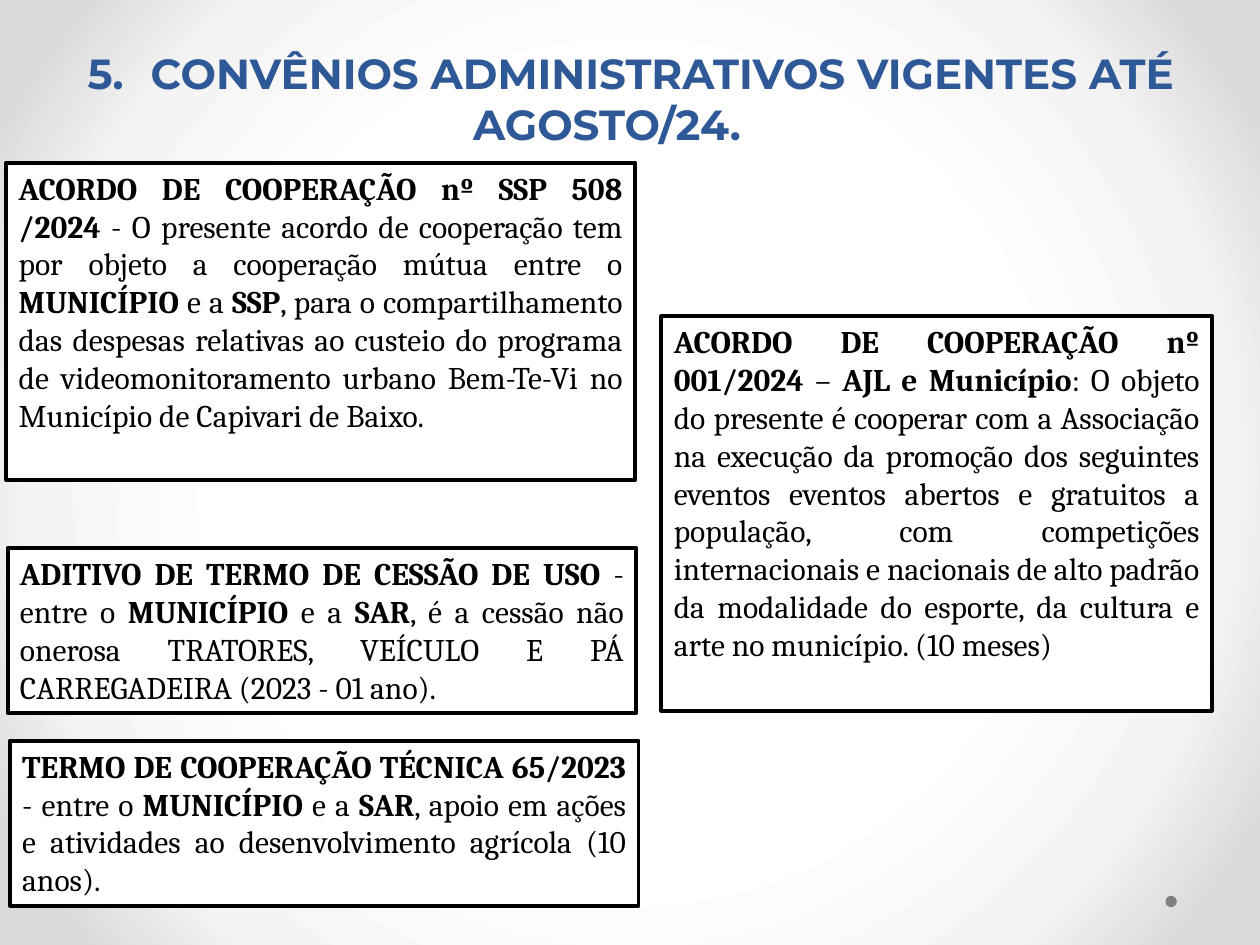
"""Build a slide listing the administrative agreements in force."""
from lxml.etree import SubElement as Sub
from pptx import Presentation
from pptx.dml.color import RGBColor
from pptx.enum.shapes import MSO_SHAPE as Kind
from pptx.enum.text import MSO_ANCHOR as Anchor, PP_ALIGN as Align
from pptx.oxml.ns import qn
from pptx.util import Pt

BLACK = RGBColor(0, 0, 0)
WHITE = RGBColor(255, 255, 255)
GRAY = RGBColor(0x80, 0x80, 0x80)
BLUE = RGBColor(0x2F, 0x58, 0x97)
STOPS = [(50, WHITE), (76, RGBColor(0xF4, 0xF4, 0xF4)), (92, RGBColor(0xDA, 0xDA, 0xDA))]

BOXES = [
    (3.6, 92.9, 359.3, 181.4, [
        "ACORDO DE COOPERAÇÃO nº SSP 508 /2024 ",
        "- O presente acordo de cooperação tem por objeto a cooperação mútua entre o ",
        "MUNICÍPIO", " e a ", "SSP",
        ", para o compartilhamento das despesas relativas ao custeio do programa de "
        "videomonitoramento urbano Bem-Te-Vi no Município de Capivari de Baixo."]),
    (378, 180.7, 314.6, 225.4, [
        "ACORDO DE COOPERAÇÃO nº 001/2024 ", "– ", "AJL e Município",
        ": O objeto do presente é cooperar com a Associação na execução da promoção dos "
        "seguintes eventos eventos abertos e gratuitos a população, com competições "
        "internacionais e nacionais de alto padrão da modalidade do esporte, da cultura "
        "e arte no município. (10 meses)"]),
    (4.3, 313.2, 359.3, 94.3, [
        "ADITIVO DE TERMO DE CESSÃO DE USO ", "- entre o ", "MUNICÍPIO", " e a ", "SAR",
        ", é a cessão não onerosa TRATORES, VEÍCULO E PÁ CARREGADEIRA (2023 - 01 ano)."]),
    (5.6, 423.2, 359.3, 94.3, [
        "TERMO DE COOPERAÇÃO TÉCNICA 65/2023 ", "- entre o ", "MUNICÍPIO", " e a ", "SAR",
        ", apoio em ações e atividades ao desenvolvimento agrícola (10 anos)."]),
]


def add_shape(kind, left, top, width, height, color):
    shape = slide.shapes.add_shape(kind, Pt(left), Pt(top), Pt(width), Pt(height))
    shape.shadow.inherit = False
    shape.fill.solid()
    shape.fill.fore_color.rgb = color
    return shape


deck = Presentation()
deck.slide_width, deck.slide_height = Pt(720), Pt(540)
slide = deck.slides.add_slide(deck.slide_layouts[6])

slide.background.fill.gradient()
grad = next(slide._element.iter(qn("a:gradFill")))
for child in list(grad):
    grad.remove(child)
stops = Sub(grad, qn("a:gsLst"))
for pos, color in STOPS:
    stop = Sub(stops, qn("a:gs"), pos=str(pos * 1000))
    Sub(stop, qn("a:srgbClr"), val=str(color))
route = Sub(grad, qn("a:path"), path="circle")
Sub(route, qn("a:fillToRect"), l="50000", t="50000", r="50000", b="50000")

dot = add_shape(Kind.OVAL, 666, 511.9, 6.5, 6.5, GRAY)
dot.line.fill.background()

title = slide.shapes.add_textbox(Pt(28.8), Pt(20.9), Pt(663.1), Pt(67.7))
frame = title.text_frame
frame.word_wrap = True
frame.vertical_anchor = Anchor.BOTTOM
para = frame.paragraphs[0]
para.text = "5.\tCONVÊNIOS ADMINISTRATIVOS VIGENTES ATÉ AGOSTO/24.\t"
para.alignment = Align.CENTER
para.font.name, para.font.size, para.font.bold = "Montserrat", Pt(24), True
para.font.color.rgb = BLUE

for left, top, width, height, parts in BOXES:
    box = add_shape(Kind.RECTANGLE, left, top, width, height, WHITE)
    box.line.color.rgb = BLACK
    box.line.width = Pt(2.25)
    frame = box.text_frame
    frame.word_wrap = True
    frame.vertical_anchor = Anchor.TOP
    para = frame.paragraphs[0]
    para.alignment = Align.JUSTIFY
    para.font.name, para.font.size = "Cambria", Pt(18)
    para.font.color.rgb = BLACK
    for i, part in enumerate(parts):
        run = para.add_run()
        run.text = part
        run.font.bold = i % 2 == 0

deck.save("out.pptx")
